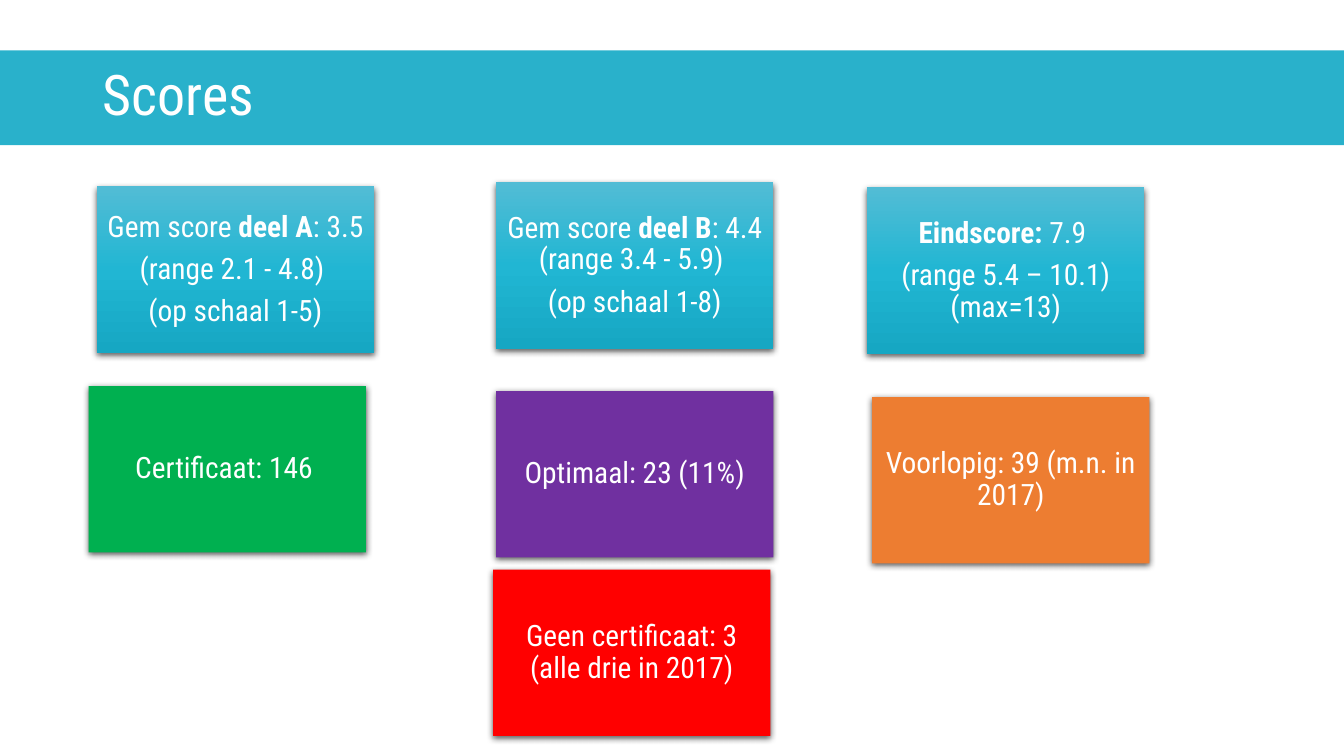
from lxml import etree
from pptx import Presentation
from pptx.dml.color import RGBColor
from pptx.enum.shapes import MSO_SHAPE
from pptx.enum.text import MSO_ANCHOR, PP_ALIGN
from pptx.oxml import parse_xml
from pptx.oxml.ns import nsdecls, qn
from pptx.util import Inches, Pt

RECTANGLE = MSO_SHAPE.RECTANGLE
MIDDLE = MSO_ANCHOR.MIDDLE
CENTER = PP_ALIGN.CENTER

WHITE = RGBColor(0xFF, 0xFF, 0xFF)
TEAL = RGBColor(0x29, 0xB1, 0xCB)
GREEN = RGBColor(0x00, 0xB0, 0x50)
PURPLE = RGBColor(0x70, 0x30, 0xA0)
ORANGE = RGBColor(0xED, 0x7D, 0x31)
RED = RGBColor(0xFF, 0x00, 0x00)
BLUE_STOPS = [
    (0, RGBColor(0x52, 0xBC, 0xD5)),
    (50, RGBColor(0x21, 0xB6, 0xD3)),
    (100, RGBColor(0x16, 0xA7, 0xC3)),
]

# Content
FONT = "Roboto Condensed"
TITLE = "Scores"
CARD_SIZE = (2.75, 1.65)
# Left, top, fill (None is the blue gradient), paragraphs of (text, bold) spans
CARDS = [
    (0.96, 1.85, None, [
        [("Gem score ", False), ("deel A", True), (": 3.5 ", False)],
        [("(range 2.1 - 4.8) ", False)],
        [("(op schaal 1-5)", False)],
    ]),
    (4.92, 1.81, None, [
        [("Gem score ", False), ("deel B", True),
         (": 4.4 (range 3.4 - 5.9) ", False)],
        [("(op schaal 1-8)", False)],
    ]),
    (8.6, 1.86, None, [
        [("Eindscore:", True), (" 7.9 ", False)],
        [("(range 5.4 – 10.1) (max=13)", False)],
    ]),
    (4.89, 5.65, RED, [[("Geen certificaat: 3 (alle drie in 2017)", False)]]),
    (8.65, 3.94, ORANGE, [[("Voorlopig: 39 (m.n. in 2017)", False)]]),
    (0.88, 3.83, GREEN, [[("Certificaat: 146 ", False)]]),
    (4.92, 3.88, PURPLE, [[("Optimaal: 23 (11%)", False)]]),
]


def add_rectangle(page, left, top, width, height):
    shape = page.shapes.add_shape(
        RECTANGLE, Inches(left), Inches(top), Inches(width), Inches(height))
    shape.shadow.inherit = False
    shape.line.fill.background()
    return shape


def add_span(para, text, size, bold=False):
    span = para.add_run()
    span.text = text
    span.font.name = FONT
    span.font.size = Pt(size)
    span.font.bold = bold
    span.font.color.rgb = WHITE


def fill_gradient(shape, stops):
    shape.fill.gradient()
    shape.fill.gradient_angle = 270
    stop_list = shape._element.spPr.find(".//" + qn("a:gsLst"))
    stop_list.clear()
    for percent, color in stops:
        stop = etree.SubElement(stop_list, qn("a:gs"), pos=str(percent * 1000))
        etree.SubElement(stop, qn("a:srgbClr"), val=str(color))


def add_shadow(shape):
    effects = shape._element.spPr.find(qn("a:effectLst"))
    effects.append(parse_xml(
        f'<a:outerShdw {nsdecls("a")} blurRad="{Pt(4.5)}" dist="{Pt(1.5)}" '
        'dir="5400000" algn="ctr" rotWithShape="0"><a:srgbClr val="000000">'
        '<a:alpha val="63000"/></a:srgbClr></a:outerShdw>'))


def add_card(page, left, top, color, paragraphs):
    card = add_rectangle(page, left, top, *CARD_SIZE)
    if color is None:
        fill_gradient(card, BLUE_STOPS)
    else:
        card.fill.solid()
        card.fill.fore_color.rgb = color
    add_shadow(card)

    frame = card.text_frame
    frame.word_wrap = True
    frame.vertical_anchor = MIDDLE
    frame.margin_left = frame.margin_right = Inches(0.09)
    frame.margin_top = frame.margin_bottom = Inches(0.09)
    for index, spans in enumerate(paragraphs):
        para = frame.add_paragraph() if index else frame.paragraphs[0]
        para.alignment = CENTER
        para.line_spacing = 0.9
        para.space_after = Pt(7.35)
        for text, bold in spans:
            add_span(para, text, 21, bold)


def main():
    deck = Presentation()
    deck.slide_width = Inches(13.33)
    deck.slide_height = Inches(7.5)
    page = deck.slides.add_slide(deck.slide_layouts[6])

    # Title band
    band = add_rectangle(page, 0, 0.5, 13.33, 0.94)
    band.fill.solid()
    band.fill.fore_color.rgb = TEAL
    box = page.shapes.add_textbox(
        Inches(0.92), Inches(0.5), Inches(12.41), Inches(0.94))
    box.text_frame.word_wrap = True
    box.text_frame.vertical_anchor = MIDDLE
    title = box.text_frame.paragraphs[0]
    title.line_spacing = 0.9
    add_span(title, TITLE, 40)

    # Score cards
    for card in CARDS:
        add_card(page, *card)

    deck.save("out.pptx")


if __name__ == "__main__":
    main()
